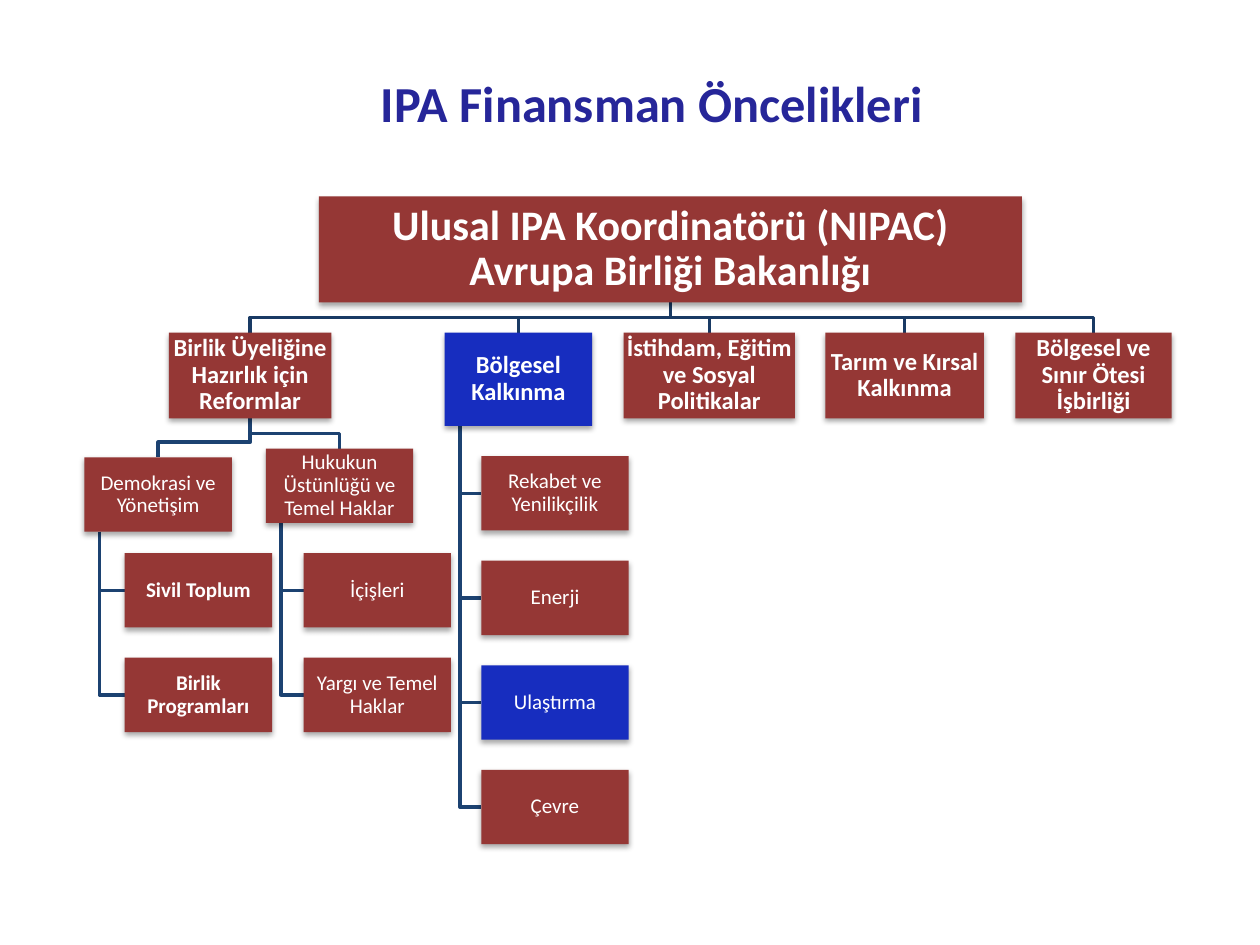
import collections

import pptx
import pptx.dml.color
import pptx.enum.shapes
import pptx.enum.text
import pptx.oxml
import pptx.oxml.ns
import pptx.util

Inches = pptx.util.Inches
RED, BLUE, WHITE, TITLE_BLUE = "953735", "172DBF", "FFFFFF", "262699"
UPPER_LINE, LOWER_LINE = "193A64", "1C4271"
GAP = 0.12
SHADOW = (
    f'<a:outerShdw {pptx.oxml.ns.nsdecls("a")} blurRad="40000" dist="23000" '
    'dir="5400000" rotWithShape="0"><a:srgbClr val="000000">'
    '<a:alpha val="35000"/></a:srgbClr></a:outerShdw>'
)

Unit = collections.namedtuple("Unit", "text left top width height size bold fill")


def colour(hex_string):
    return pptx.dml.color.RGBColor.from_string(hex_string)


def write(frame, text, size=12, bold=False, color=WHITE, inset=0.01, spacing=0.9):
    frame.word_wrap = True
    frame.vertical_anchor = pptx.enum.text.MSO_ANCHOR.MIDDLE
    frame.margin_left = frame.margin_right = Inches(inset)
    frame.margin_top = frame.margin_bottom = Inches(inset)
    paragraph = frame.paragraphs[0]
    paragraph.text = text
    paragraph.alignment = pptx.enum.text.PP_ALIGN.CENTER
    paragraph.line_spacing = spacing
    for run in paragraph.runs:
        run.font.name = "Calibri"
        run.font.size = pptx.util.Pt(size)
        run.font.bold = bold
        run.font.color.rgb = colour(color)


class OrgChart:
    def __init__(self, slide):
        self.shapes = slide.shapes

    def title(self, text):
        box = self.shapes.add_textbox(Inches(2), Inches(0.35), Inches(6.35), Inches(0.93))
        write(box.text_frame, text, size=28.8, bold=True, color=TITLE_BLUE, inset=0.05, spacing=1.0)

    def box(self, unit):
        rect = self.shapes.add_shape(
            pptx.enum.shapes.MSO_SHAPE.RECTANGLE,
            Inches(unit.left), Inches(unit.top), Inches(unit.width), Inches(unit.height),
        )
        rect.fill.solid()
        rect.fill.fore_color.rgb = colour(unit.fill)
        rect.line.fill.background()
        rect.shadow.inherit = False
        effects = rect._element.spPr.find(pptx.oxml.ns.qn("a:effectLst"))
        effects.append(pptx.oxml.parse_xml(SHADOW))
        write(rect.text_frame, unit.text, size=unit.size, bold=unit.bold)

    def route(self, points, color):
        start, *rest = [(Inches(x), Inches(y)) for x, y in points]
        builder = self.shapes.build_freeform(*start)
        builder.add_line_segments(rest, close=False)
        line = builder.convert_to_shape()
        line.fill.background()
        line.line.color.rgb = colour(color)
        line.line.width = pptx.util.Pt(2)
        line.shadow.inherit = False

    def branch(self, parent, child, color):
        start = parent.left + parent.width / 2
        end = child.left + child.width / 2
        turn = child.top - GAP
        bottom = parent.top + parent.height
        self.route([(start, bottom), (start, turn), (end, turn), (end, child.top)], color)

    def hang(self, parent, child):
        rail = parent.left + GAP
        middle = child.top + child.height / 2
        bottom = parent.top + parent.height
        self.route([(rail, bottom), (rail, middle), (child.left, middle)], LOWER_LINE)


def component(text, left, width, height=0.68, fill=RED):
    return Unit(text, left, 2.64, width, height, 14, True, fill)


def area(text, left, top, bold=False, fill=RED):
    return Unit(text, left, top, 1.17, 0.59, 12, bold, fill)


def column(texts, left, top, bold=False, highlight=None):
    return [
        area(text, left, top + 0.83 * row, bold, BLUE if text == highlight else RED)
        for row, text in enumerate(texts)
    ]


def main():
    deck = pptx.Presentation()
    deck.slide_width, deck.slide_height = Inches(10), Inches(7.5)
    chart = OrgChart(deck.slides.add_slide(deck.slide_layouts[6]))

    coordinator = Unit("Ulusal IPA Koordinatörü (NIPAC)\nAvrupa Birliği Bakanlığı",
                       2.53, 1.56, 5.58, 0.84, 24, True, RED)
    reforms = component("Birlik Üyeliğine Hazırlık için Reformlar", 1.34, 1.29)
    regional = component("Bölgesel Kalkınma", 3.53, 1.17, 0.74, BLUE)
    components = [
        reforms,
        regional,
        component("İstihdam, Eğitim ve Sosyal Politikalar", 4.95, 1.36),
        component("Tarım ve Kırsal Kalkınma", 6.55, 1.26),
        component("Bölgesel ve Sınır Ötesi İşbirliği", 8.06, 1.24),
    ]
    democracy = area("Demokrasi ve Yönetişim", 0.67, 3.63)
    law = area("Hukukun Üstünlüğü ve Temel Haklar", 2.11, 3.56)
    columns = [
        (democracy, column(["Sivil Toplum", "Birlik Programları"], 0.99, 4.39, bold=True)),
        (law, column(["İçişleri", "Yargı ve Temel Haklar"], 2.41, 4.39)),
        (regional, column(["Rekabet ve Yenilikçilik", "Enerji", "Ulaştırma", "Çevre"],
                          3.82, 3.62, highlight="Ulaştırma")),
    ]

    chart.title("IPA Finansman Öncelikleri")
    for unit in components:
        chart.branch(coordinator, unit, UPPER_LINE)
    for unit in (democracy, law):
        chart.branch(reforms, unit, LOWER_LINE)
    for parent, children in columns:
        for child in children:
            chart.hang(parent, child)
    for unit in [coordinator, *components, democracy, law]:
        chart.box(unit)
    for _, children in columns:
        for child in children:
            chart.box(child)

    deck.save("out.pptx")


if __name__ == "__main__":
    main()
